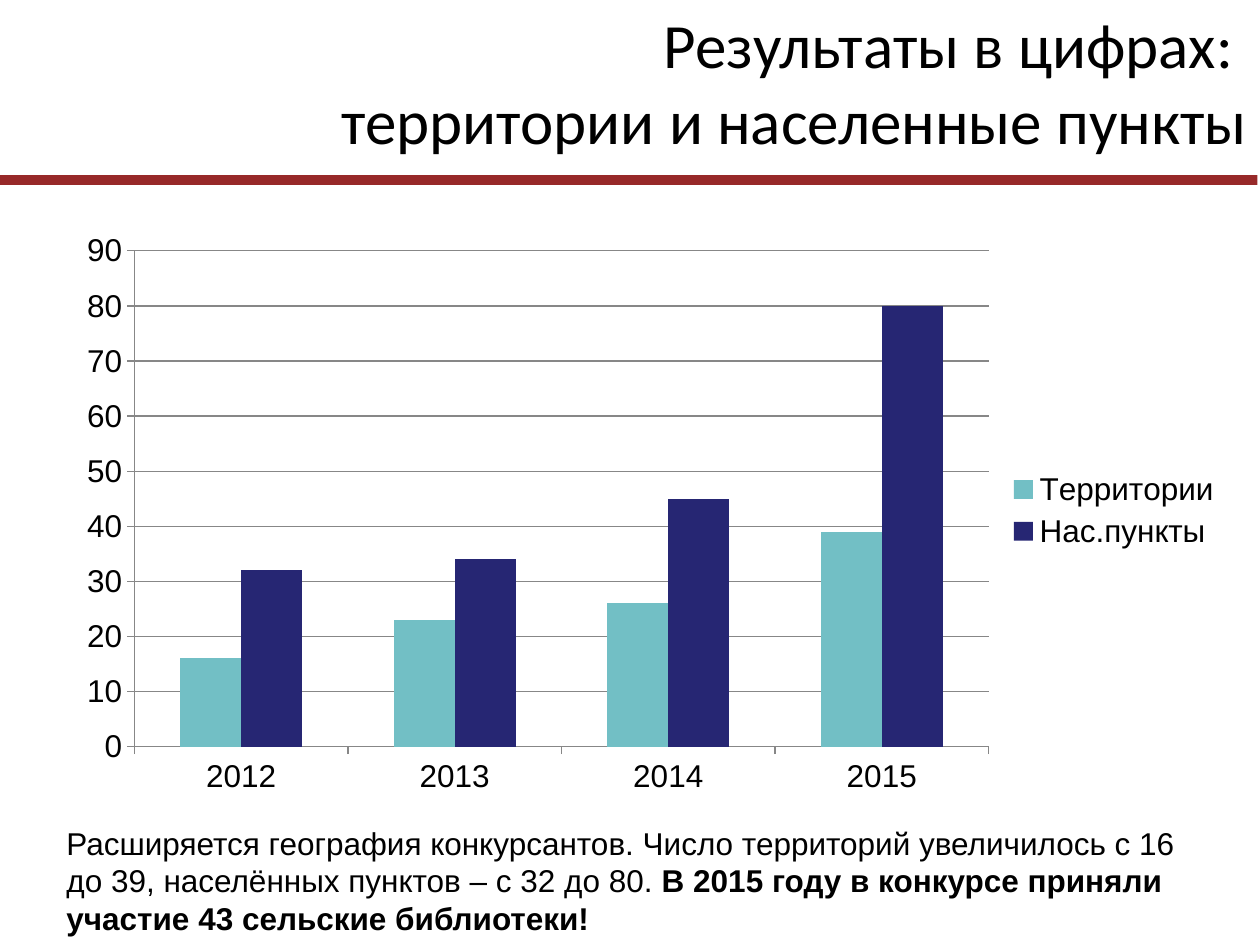
from lxml import etree
from pptx import Presentation
from pptx.chart.data import CategoryChartData
from pptx.dml.color import RGBColor
from pptx.enum import chart as charts, shapes, text
from pptx.oxml.ns import qn
from pptx.util import Cm, Pt

BLACK = RGBColor(0x00, 0x00, 0x00)
GREY = RGBColor(0x87, 0x87, 0x87)
RED = RGBColor(0x97, 0x29, 0x29)
TEAL = RGBColor(0x72, 0xBF, 0xC5)
NAVY = RGBColor(0x26, 0x26, 0x73)

YEARS = ["2012", "2013", "2014", "2015"]
SERIES = [
    ("Территории", (16, 23, 26, 39), TEAL),
    ("Нас.пункты", (32, 34, 45, 80), NAVY),
]
PLOT_AREA = {"x": 0.061, "y": 0.052, "w": 0.729, "h": 0.856}


def set_attributes(target, values):
    for name, value in values.items():
        setattr(target, name, value)


def set_font(font, **values):
    set_attributes(font, values)
    font.color.rgb = BLACK


def add_header(page, left, top, width, height):
    # Title, right-aligned on two lines
    title = page.shapes.title
    set_attributes(title, {"left": left + Cm(2.59), "top": top + Cm(0.05),
                           "width": width - Cm(2.54), "height": Cm(3.18)})
    frame = title.text_frame
    set_attributes(frame, {"word_wrap": True,
                           "auto_size": text.MSO_AUTO_SIZE.NONE,
                           "vertical_anchor": text.MSO_ANCHOR.MIDDLE})
    para = frame.paragraphs[0]
    para.text = "Результаты в цифрах: \vтерритории и населенные пункты"
    para.alignment = text.PP_ALIGN.RIGHT
    for span in para.runs:
        set_font(span.font, size=Pt(36), name="Calibri")

    # Band under the title
    band_height = Cm(0.2)
    band = page.shapes.add_shape(shapes.MSO_SHAPE.RECTANGLE, left,
                                 top + height - band_height, width, band_height)
    band.shadow.inherit = False
    band.fill.solid()
    band.fill.fore_color.rgb = RED
    band.line.fill.background()


def fix_plot_area(chart):
    plot_area = chart.element.find(".//" + qn("c:plotArea"))
    layout = plot_area.find(qn("c:layout"))
    if layout is None:
        layout = etree.Element(qn("c:layout"))
        plot_area.insert(0, layout)
    manual = etree.SubElement(layout, qn("c:manualLayout"))
    settings = {"layoutTarget": "inner", "xMode": "edge", "yMode": "edge", **PLOT_AREA}
    for name, value in settings.items():
        etree.SubElement(manual, qn("c:" + name)).set("val", str(value))


def add_column_chart(page, left, top, width, height):
    chart_data = CategoryChartData()
    chart_data.categories = YEARS
    for name, values, _ in SERIES:
        chart_data.add_series(name, values)
    chart = page.shapes.add_chart(charts.XL_CHART_TYPE.COLUMN_CLUSTERED,
                                  left, top, width, height, chart_data).chart
    chart.has_title = False
    set_font(chart.font, size=Pt(18), name="Arial")
    fix_plot_area(chart)

    # Columns
    plot = chart.plots[0]
    set_attributes(plot, {"gap_width": 150, "overlap": 0, "vary_by_categories": False})
    for series, (_, _, color) in zip(plot.series, SERIES):
        series.format.fill.solid()
        series.format.fill.fore_color.rgb = color

    # Axes and gridlines
    value_axis = chart.value_axis
    set_attributes(value_axis, {"minimum_scale": 0, "maximum_scale": 90,
                                "major_unit": 10, "has_major_gridlines": True})
    for axis in (chart.category_axis, value_axis):
        axis.major_tick_mark = charts.XL_TICK_MARK.OUTSIDE
    for lined in (chart.category_axis, value_axis, value_axis.major_gridlines):
        lined.format.line.color.rgb = GREY
        lined.format.line.width = Pt(0.75)

    # Legend
    chart.has_legend = True
    set_attributes(chart.legend, {"position": charts.XL_LEGEND_POSITION.RIGHT,
                                  "include_in_layout": False})


def add_summary(page, left, top, width, height):
    box = page.shapes.add_textbox(left, top, width, height)
    set_attributes(box.text_frame, {"word_wrap": True,
                                    "auto_size": text.MSO_AUTO_SIZE.SHAPE_TO_FIT_TEXT})
    para = box.text_frame.paragraphs[0]
    parts = [
        ("Расширяется география конкурсантов. Число территорий увеличилось "
         "с 16 до 39, населённых пунктов – с 32 до 80. ", False),
        ("В 2015 году в конкурсе приняли участие 43 сельские библиотеки!", True),
    ]
    for words, bold in parts:
        span = para.add_run()
        span.text = words
        set_font(span.font, size=Pt(18), name="Arial", bold=bold)


def main():
    deck = Presentation()
    set_attributes(deck, {"slide_width": Cm(25.4), "slide_height": Cm(19.05)})
    page = deck.slides.add_slide(deck.slide_layouts.get_by_name("Title Only"))
    add_header(page, Cm(-0.05), Cm(0), Cm(25.4), Cm(3.73))
    add_column_chart(page, Cm(1.27), Cm(4.45), Cm(23.62), Cm(11.68))
    add_summary(page, Cm(1.09), Cm(16.48), Cm(23.6), Cm(2.57))
    deck.save("out.pptx")


if __name__ == "__main__":
    main()
